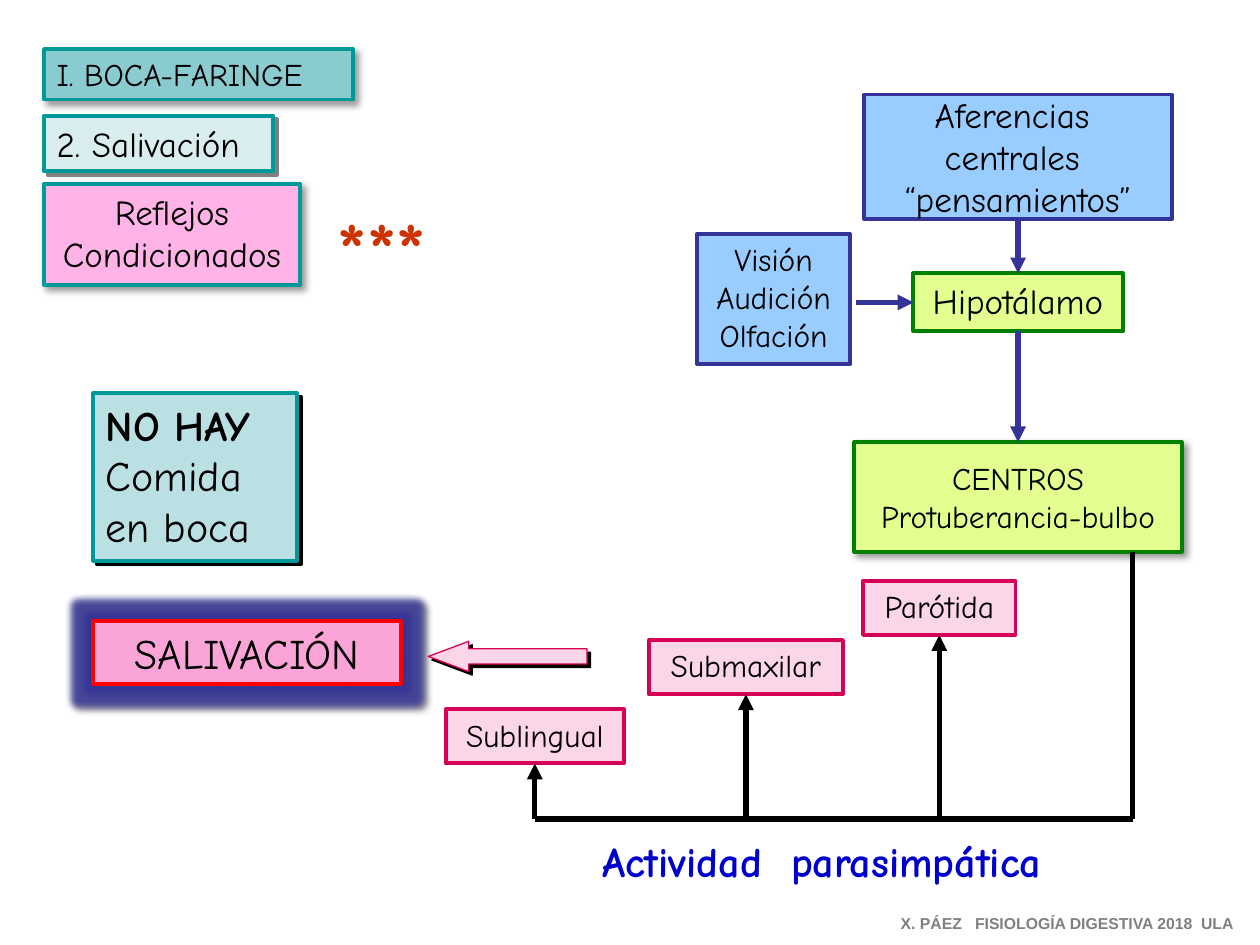
from lxml.etree import SubElement
from pptx import Presentation
from pptx.dml.color import RGBColor
from pptx.enum.shapes import MSO_CONNECTOR, MSO_SHAPE
from pptx.enum.text import MSO_ANCHOR, MSO_AUTO_SIZE, PP_ALIGN
from pptx.oxml.ns import qn
from pptx.util import Inches, Pt

COLORS = {
    "black": "000000", "grey": "808080", "teal": "009999", "heading": "8ACBD0",
    "subheading": "D9EDEF", "pink": "FFB3E6", "absent": "BBE0E3",
    "stimulus": "99CCFF", "navy": "333399", "centre": "E2FF8F",
    "green": "008000", "gland": "FBD5E8", "crimson": "D60057",
    "saliva": "FAA4D7", "red": "FF0000", "stars": "CC3300", "nerve": "0000CC",
}
FONT = "Comic Neue"
SOFT = dict(color="black", alpha=40, blur=4, dist=3)
HARD_BLACK = dict(color="black", alpha=100, blur=0, dist=2.8)
HARD_GREY = dict(HARD_BLACK, color="grey")


def rgb(name):
    return RGBColor.from_string(COLORS[name])


def add_color(parent, name, alpha):
    color = SubElement(parent, qn("a:srgbClr"), val=COLORS[name])
    SubElement(color, qn("a:alpha"), val=str(alpha * 1000))


def add_shadow(effects, color, alpha, blur, dist):
    shadow = SubElement(effects, qn("a:outerShdw"), blurRad=str(Pt(blur)),
                        dist=str(Pt(dist)), dir="2700000", algn="tl", rotWithShape="0")
    add_color(shadow, color, alpha)


def style(shape, fill, line, width=2.25, shadow=None, glow=None):
    shape.fill.solid()
    shape.fill.fore_color.rgb = rgb(fill)
    shape.line.color.rgb = rgb(line)
    shape.line.width = Pt(width)
    shape.shadow.inherit = False
    effects = shape._element.spPr.find(qn("a:effectLst"))
    if glow:
        add_color(SubElement(effects, qn("a:glow"), rad=str(Pt(8))), glow, 80)
    if shadow:
        add_shadow(effects, **shadow)


def add_run(paragraph, text, size, color="black", bold=False, font=FONT, spacing=0):
    run = paragraph.add_run()
    run.text = text
    run.font.size = Pt(size)
    run.font.name = font
    run.font.bold = bold
    run.font.color.rgb = rgb(color)
    if spacing:
        run._r.get_or_add_rPr().set("spc", str(spacing))
    return run


def set_frame(shape, grow=True, wrap=False):
    frame = shape.text_frame
    frame.word_wrap = wrap
    frame.auto_size = MSO_AUTO_SIZE.SHAPE_TO_FIT_TEXT if grow else MSO_AUTO_SIZE.NONE
    frame.vertical_anchor = MSO_ANCHOR.TOP if grow else MSO_ANCHOR.MIDDLE
    return frame


def add_box(slide, left, top, width, height, lines, size, fill, line,
            align=PP_ALIGN.CENTER, grow=True, bold_lines=(), **effects):
    box = slide.shapes.add_shape(MSO_SHAPE.RECTANGLE, left, top, width, height)
    style(box, fill, line, **effects)
    frame = set_frame(box, grow)
    for index, text in enumerate(lines):
        paragraph = frame.add_paragraph() if index else frame.paragraphs[0]
        paragraph.alignment = align
        add_run(paragraph, text, size, bold=text in bold_lines)
    return box


def add_line(slide, start, end, color, arrow=True):
    line = slide.shapes.add_connector(MSO_CONNECTOR.STRAIGHT, *start, *end)
    line.line.color.rgb = rgb(color)
    line.line.width = Pt(3)
    if arrow:
        SubElement(line.line._get_or_add_ln(), qn("a:tailEnd"), type="triangle")
    SubElement(line._element.spPr, qn("a:effectLst"))
    return line


def bottom_center(shape):
    return shape.left + shape.width // 2, shape.top + shape.height


def top_center(shape):
    return shape.left + shape.width // 2, shape.top


def add_headings(slide, left, top):
    add_box(slide, left, top, Inches(2.45), Inches(0.4), ["I. BOCA-FARINGE"], 18,
            "heading", "teal", PP_ALIGN.LEFT, shadow=SOFT)
    add_box(slide, left, top + Inches(0.53), Inches(1.82), Inches(0.44),
            ["2. Salivación"], 20, "subheading", "teal", PP_ALIGN.LEFT, shadow=HARD_GREY)
    add_box(slide, left, top + Inches(1.07), Inches(2.03), Inches(0.8),
            ["Reflejos", "Condicionados"], 20, "pink", "teal", shadow=SOFT)
    stars = slide.shapes.add_textbox(left + Inches(2.01), top + Inches(1.15),
                                     Inches(1.34), Inches(0.83))
    paragraph = set_frame(stars, wrap=True).paragraphs[0]
    paragraph.alignment = PP_ALIGN.CENTER
    run = add_run(paragraph, "***", 44, "stars", True)
    fill = run._r.rPr.find(qn("a:solidFill"))
    effects = SubElement(run._r.rPr, qn("a:effectLst"))
    fill.addnext(effects)
    add_shadow(effects, **HARD_BLACK)


def add_outcome(slide, left, top):
    add_box(slide, left, top, Inches(1.62), Inches(1.33), ["NO HAY", "Comida", "en boca"],
            24, "absent", "teal", PP_ALIGN.LEFT, bold_lines=("NO HAY",), shadow=HARD_BLACK)
    add_box(slide, left, top + Inches(1.81), Inches(2.44), Inches(0.5), ["SALIVACIÓN"],
            24, "saliva", "red", shadow=HARD_GREY, glow="navy")
    arrow = slide.shapes.add_shape(MSO_SHAPE.LEFT_ARROW, left + Inches(2.66),
                                   top + Inches(1.97), Inches(1.26), Inches(0.24))
    arrow.adjustments[0] = 0.5
    arrow.adjustments[1] = 1.335
    style(arrow, "gland", "crimson", 0.75, HARD_BLACK)


def add_brain(slide, left, top):
    thoughts = add_box(slide, left + Inches(1.33), top, Inches(2.44), Inches(0.99),
                       ["Aferencias ", "centrales ", "“pensamientos”"], 20,
                       "stimulus", "navy", grow=False)
    senses = add_box(slide, left, top + Inches(1.11), Inches(1.22), Inches(1.03),
                     ["Visión", "Audición", "Olfación"], 18, "stimulus", "navy")
    hypothalamus = add_box(slide, left + Inches(1.72), top + Inches(1.42), Inches(1.66),
                           Inches(0.46), ["Hipotálamo"], 20, "centre", "green")
    centres = add_box(slide, left + Inches(1.25), top + Inches(2.76), Inches(2.6),
                      Inches(0.87), ["CENTROS", "Protuberancia-bulbo"], 18,
                      "centre", "green", grow=False, shadow=SOFT)
    for source, target in ((thoughts, hypothalamus), (hypothalamus, centres)):
        path_down = add_line(slide, bottom_center(source), top_center(target), "navy")
        path_down.begin_connect(source, 2)
        path_down.end_connect(target, 0)
    middle = hypothalamus.top + hypothalamus.height // 2
    sensory = add_line(slide, (senses.left + senses.width + Inches(0.04), middle),
                       (hypothalamus.left, middle), "navy")
    sensory.end_connect(hypothalamus, 1)
    return centres


def add_glands(slide, left, top, centres):
    trunk_y = top + Inches(1.89)
    trunk_x = left + Inches(5.45)
    glands = [
        add_box(slide, left + Inches(x), top + Inches(y), Inches(width), Inches(0.43),
                [name], 18, "gland", "crimson")
        for name, x, y, width in (("Parótida", 3.31, 0, 1.21),
                                  ("Submaxilar", 1.61, 0.47, 1.54),
                                  ("Sublingual", 0, 1.02, 1.41))
    ]
    for gland in glands:
        x, bottom = bottom_center(gland)
        branch = add_line(slide, (x, trunk_y), (x, bottom), "black")
        branch.end_connect(gland, 2)
    add_line(slide, (trunk_x, centres.top + centres.height), (trunk_x, trunk_y),
             "black", arrow=False)
    add_line(slide, (trunk_x, trunk_y), (bottom_center(glands[-1])[0], trunk_y),
             "black", arrow=False)
    caption = slide.shapes.add_textbox(left + Inches(0.87), top + Inches(1.97),
                                       Inches(4.22), Inches(0.5))
    paragraph = set_frame(caption).paragraphs[0]
    paragraph.alignment = PP_ALIGN.CENTER
    for text, spacing in (("Actividad", 0), (" ", 800), ("parasimpática", 0)):
        add_run(paragraph, text, 24, "nerve", True, spacing=spacing)


def add_footer(slide, left, top):
    footer = slide.shapes.add_textbox(left, top, Inches(2.86), Inches(0.25))
    paragraph = set_frame(footer).paragraphs[0]
    for text, spacing in (("X. PÁEZ", 0), (" ", 500), ("FISIOLOGÍA DIGESTIVA 2018", 0),
                          (" ", 250), ("ULA", 0)):
        add_run(paragraph, text, 9, "grey", True, "Arial", spacing)


def main():
    deck = Presentation()
    deck.slide_width, deck.slide_height = Inches(10), Inches(7.5)
    slide = deck.slides.add_slide(deck.slide_layouts[6])
    add_headings(slide, Inches(0.35), Inches(0.39))
    add_outcome(slide, Inches(0.74), Inches(3.12))
    centres = add_brain(slide, Inches(5.53), Inches(0.75))
    add_glands(slide, Inches(3.54), Inches(4.61), centres)
    add_footer(slide, Inches(7.05), Inches(7.2))
    deck.save("out.pptx")


if __name__ == "__main__":
    main()
